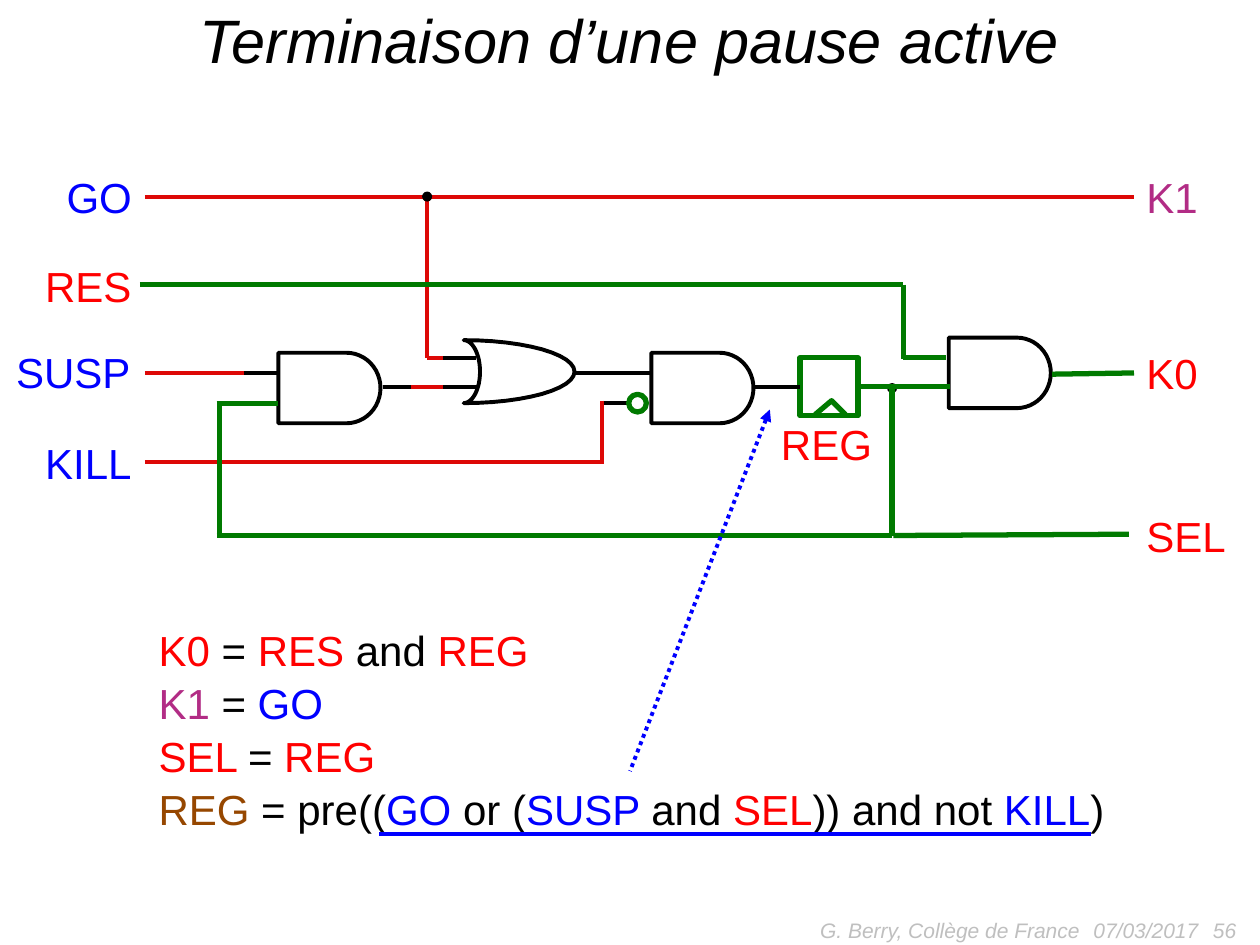
import math

from lxml import etree
from pptx import Presentation
from pptx import util as u
from pptx.dml.color import RGBColor
from pptx.enum import dml, shapes, text
from pptx.oxml.ns import qn

BLACK, RED, BLUE, PURPLE, BROWN = "000000", "FF0000", "0000FF", "B22C85", "964700"
WIRE_RED, GREEN, GREY = "DD0806", "007A00", "BFBFBF"
LEFT, RIGHT = 1, 3


def rgb(code):
    return RGBColor.from_string(code)


def arc(cx, cy, rx, ry, start, end, steps=24):
    angles = [math.radians(start + (end - start) * i / steps) for i in range(steps + 1)]
    return [(cx + rx * math.cos(a), cy + ry * math.sin(a)) for a in angles]


class Circuit:
    """Draws circuit elements and text on one slide in a shared style."""

    font = "Arial"

    def __init__(self, slide):
        self.s = slide

    def stroke(self, line, color, width):
        line.color.rgb = rgb(color)
        line.width = u.Pt(width)

    def label(self, box, paragraphs, size=24, align=None, italic=False,
              wrap=False, anchor=None, spacing=None):
        tf = self.s.shapes.add_textbox(*map(u.Inches, box)).text_frame
        tf.word_wrap = wrap
        tf.vertical_anchor = anchor
        for i, runs in enumerate(paragraphs):
            p = tf.add_paragraph() if i else tf.paragraphs[0]
            p.alignment, p.line_spacing = align, spacing
            p.font.name, p.font.size, p.font.italic = self.font, u.Pt(size), italic
            for words, color in runs:
                r = p.add_run()
                r.text = words
                r.font.color.rgb = rgb(color)

    def wire(self, color, start, end, width=2.25, source=None, target=None):
        sp = self.s.shapes.add_connector(
            shapes.MSO_CONNECTOR.STRAIGHT, *map(u.Inches, (*start, *end)))
        self.stroke(sp.line, color, width)
        etree.SubElement(sp._element.spPr, qn("a:effectLst"))
        if source:
            sp.begin_connect(*source)
        if target:
            sp.end_connect(*target)
        return sp

    def pointer(self, color, tip, tail):
        sp = self.wire(color, tip, tail)
        sp.line.dash_style = dml.MSO_LINE.ROUND_DOT
        etree.SubElement(sp.line._get_or_add_ln(), qn("a:headEnd"), type="triangle")

    def preset(self, kind, box, fill=None, line=None, width=3):
        sp = self.s.shapes.add_shape(kind, *map(u.Inches, box))
        sp.shadow.inherit = False
        if fill:
            sp.fill.solid()
            sp.fill.fore_color.rgb = rgb(fill)
        else:
            sp.fill.background()
        if line:
            self.stroke(sp.line, line, width)
        else:
            sp.line.fill.background()
        return sp

    def dot(self, x, y):
        self.preset(shapes.MSO_SHAPE.OVAL, (x - 0.04, y - 0.04, 0.08, 0.08), BLACK)

    def outline(self, points, color=BLACK, width=2.25, close=True):
        pts = [(u.Inches(x), u.Inches(y)) for x, y in points]
        fb = self.s.shapes.build_freeform(*pts[0])
        fb.add_line_segments(pts[1:], close=close)
        sp = fb.convert_to_shape()
        sp.shadow.inherit = False
        sp.fill.background()
        self.stroke(sp.line, color, width)

    def and_gate(self, x, y, flat=0.54, rx=0.27, ry=0.28):
        self.outline([(x, y)] + arc(x + flat, y + ry, rx, ry, -90, 90) + [(x, y + 2 * ry)])

    def or_gate(self, x, y, rx=0.88, back=0.13, ry=0.25):
        self.outline(arc(x, y + ry, rx, ry, -90, 90) + arc(x, y + ry, back, ry, 90, -90))


def main():
    prs = Presentation()
    prs.slide_width, prs.slide_height = u.Inches(10), u.Inches(7.5)
    c = Circuit(prs.slides.add_slide(prs.slide_layouts[6]))

    c.label((0.25, -0.03, 9.5, 0.71), [[("Terminaison d’une pause active", BLACK)]],
            35, text.PP_ALIGN.CENTER, True, True)
    for words, x, w, align in (
            ("G. Berry, Collège de France", 5.5, 3.17, text.PP_ALIGN.RIGHT),
            ("07/03/2017", 8.58, 2.33, text.PP_ALIGN.LEFT),
            ("56", 7.58, 2.33, text.PP_ALIGN.RIGHT)):
        c.label((x, 7.18, w, 0.4), [[(words, GREY)]], 12, align, True, True,
                text.MSO_ANCHOR.MIDDLE)

    for words, color, x, y, w in (
            ("GO", BLUE, 0.43, 1.31, 0.72), ("RES", RED, 0.26, 2.02, 0.89),
            ("SUSP", BLUE, 0.03, 2.7, 1.12), ("KILL", BLUE, 0.26, 3.42, 0.89),
            ("K1", PURPLE, 9, 1.31, 0.61), ("K0", RED, 9, 2.71, 0.61),
            ("SEL", RED, 9, 4, 0.84), ("REG", RED, 6.1, 3.27, 0.93)):
        c.label((x, y, w, 0.5), [[(words, color)]])

    c.label((1.16, 4.89, 7.79, 1.8), [
        [("K0 ", RED), ("= ", BLACK), ("RES ", RED), ("and ", BLACK), ("REG", RED)],
        [("K1 ", PURPLE), ("=", BLACK), (" GO", BLUE)],
        [("SEL ", RED), ("= ", BLACK), ("REG", RED)],
        [("REG ", BROWN), ("= pre((", BLACK), ("GO ", BLUE), ("or (", BLACK),
         ("SUSP ", BLUE), ("and ", BLACK), ("SEL", RED), (")) and not ", BLACK),
         ("KILL", BLUE), (")", BLACK)],
    ], spacing=1.05)

    for color, start, end in (
            (WIRE_RED, (1.15, 1.56), (9, 1.56)),
            (WIRE_RED, (3.39, 1.54), (3.39, 2.84)),
            (WIRE_RED, (3.39, 2.84), (3.54, 2.84)),
            (BLACK, (3.52, 2.84), (3.78, 2.84)),
            (WIRE_RED, (1.15, 2.96), (1.96, 2.96)),
            (BLACK, (1.94, 2.96), (2.2, 2.96)),
            (BLACK, (3.04, 3.07), (3.27, 3.07)),
            (WIRE_RED, (3.26, 3.07), (3.53, 3.07)),
            (BLACK, (3.52, 3.07), (3.79, 3.07)),
            (BLACK, (4.57, 2.96), (5.17, 2.96)),
            (WIRE_RED, (1.15, 3.67), (4.79, 3.67)),
            (BLACK, (5, 3.2), (4.76, 3.2)),
            (WIRE_RED, (4.78, 3.18), (4.78, 3.67))):
        c.wire(color, start, end)

    for x, y in ((2.21, 2.8), (5.17, 2.8), (7.53, 2.68)):
        c.and_gate(x, y)
    c.or_gate(3.68, 2.7)
    c.dot(3.39, 1.56)
    c.dot(7.08, 3.08)

    reg = c.preset(shapes.MSO_SHAPE.RECTANGLE, (6.35, 2.84, 0.46, 0.46), "FFFFFF", GREEN)
    c.outline([(6.47, 3.29), (6.6, 3.18), (6.71, 3.29)], GREEN, 3, False)
    c.preset(shapes.MSO_SHAPE.OVAL, (4.99, 3.13, 0.14, 0.14), line=GREEN)
    c.wire(BLACK, (5.98, 3.07), (6.35, 3.07), target=(reg, LEFT))
    c.wire(GREEN, (6.81, 3.07), (7.54, 3.07), 3, source=(reg, RIGHT))
    for start, end in (
            ((1.11, 2.26), (7.17, 2.26)), ((7.17, 2.26), (7.17, 2.85)),
            ((7.17, 2.84), (7.51, 2.84)), ((8.35, 2.97), (9, 2.96)),
            ((7.08, 3.08), (7.08, 4.25)), ((7.09, 4.25), (8.96, 4.24)),
            ((1.72, 4.25), (7.08, 4.25)), ((1.74, 3.2), (1.74, 4.25)),
            ((1.72, 3.2), (2.21, 3.2))):
        c.wire(GREEN, start, end, 3)

    c.wire(BLUE, (3.01, 6.62), (8.66, 6.62))
    c.pointer(BLUE, (6.11, 3.25), (5, 6.12))
    prs.save("out.pptx")


if __name__ == "__main__":
    main()
